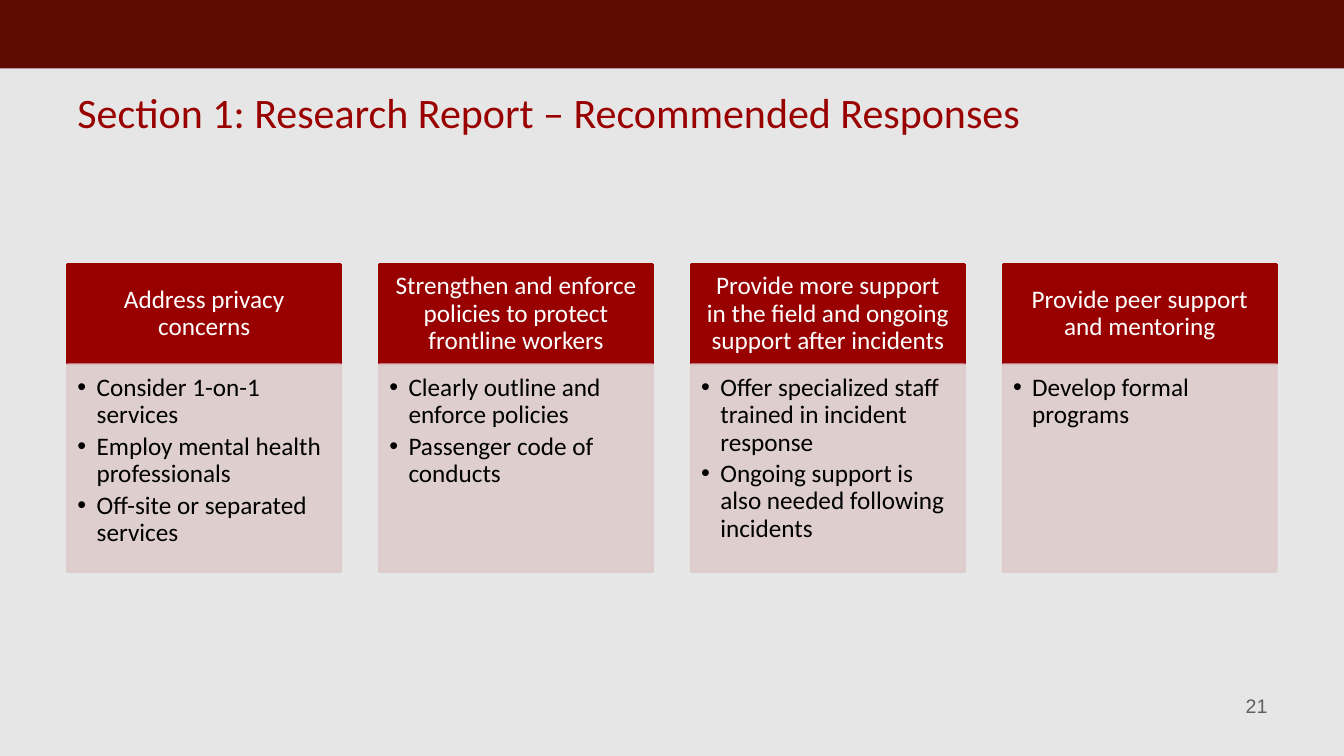
from lxml import etree
from pptx import Presentation
from pptx.dml.color import RGBColor
from pptx.enum.shapes import MSO_SHAPE
from pptx.enum.text import MSO_ANCHOR, PP_ALIGN
from pptx.oxml.ns import qn
from pptx.util import Inches, Pt

RECTANGLE = MSO_SHAPE.RECTANGLE
TOP, MIDDLE = MSO_ANCHOR.TOP, MSO_ANCHOR.MIDDLE
LEFT, CENTER, RIGHT = PP_ALIGN.LEFT, PP_ALIGN.CENTER, PP_ALIGN.RIGHT

RED, PINK = "990000", "DECCCC"
COLUMN_LEFT, COLUMN_STEP, COLUMN_WIDTH = 0.67, 3.093, 2.71
HEADER_TOP, HEADER_HEIGHT = 2.62, 0.99
BODY_TOP, BODY_HEIGHT = 3.62, 2.05
DEFAULT_INSETS = (0.1, 0.05, 0.1, 0.05)
HEADER_INSETS = (0.14, 0.08, 0.14, 0.08)
BODY_INSETS = (0.1, 0.1, 0.14, 0.16)
BULLET_INDENT = 0.19

RESPONSES = [
    ("Address privacy concerns",
     ["Consider 1-on-1 services",
      "Employ mental health professionals",
      "Off-site or separated services"]),
    ("Strengthen and enforce policies to protect frontline workers",
     ["Clearly outline and enforce policies",
      "Passenger code of conducts"]),
    ("Provide more support in the field and ongoing support after incidents",
     ["Offer specialized staff trained in incident response",
      "Ongoing support is also needed following incidents"]),
    ("Provide peer support and mentoring",
     ["Develop formal programs"]),
]


def paint(color_format, color):
    color_format.rgb = RGBColor.from_string(color)


def add_box(page, place, color, outlined=True):
    box = page.shapes.add_shape(RECTANGLE, *map(Inches, place))
    box.shadow.inherit = False
    box.fill.solid()
    paint(box.fill.fore_color, color)
    if outlined:
        box.line.width = Pt(2)
        paint(box.line.color, color)
    else:
        box.line.fill.background()
    return box


def set_opacity(box, percent):
    for color in box._element.spPr.iter(qn("a:srgbClr")):
        etree.SubElement(color, qn("a:alpha"), val=str(percent * 1000))


def add_bullet(para):
    properties = para._p.get_or_add_pPr()
    properties.set("marL", str(Inches(BULLET_INDENT)))
    properties.set("indent", str(-Inches(BULLET_INDENT)))
    etree.SubElement(properties, qn("a:buFont"), typeface="Arial")
    etree.SubElement(properties, qn("a:buChar"), char="•")


def write(box, lines, size, color, font="Calibri", align=LEFT, anchor=TOP,
          insets=DEFAULT_INSETS, spacing=1.0, after=0, bulleted=False):
    frame = box.text_frame
    frame.word_wrap = True
    frame.vertical_anchor = anchor
    (frame.margin_left, frame.margin_top,
     frame.margin_right, frame.margin_bottom) = map(Inches, insets)
    frame.text = "\n".join(lines)
    for para in frame.paragraphs:
        if bulleted:
            add_bullet(para)
        para.alignment = align
        para.line_spacing = spacing
        para.space_after = Pt(after)
        para.font.name = font
        para.font.size = Pt(size)
        paint(para.font.color, color)


def add_text(page, place, text, size, color, **style):
    box = page.shapes.add_textbox(*map(Inches, place))
    write(box, [text], size, color, **style)


def add_response(page, left, heading, actions):
    header = add_box(page, (left, HEADER_TOP, COLUMN_WIDTH, HEADER_HEIGHT), RED)
    write(header, [heading], 18, "FFFFFF", align=CENTER, anchor=MIDDLE,
          insets=HEADER_INSETS, spacing=0.9)
    body = add_box(page, (left, BODY_TOP, COLUMN_WIDTH, BODY_HEIGHT), PINK)
    set_opacity(body, 90)
    write(body, actions, 18, "000000", insets=BODY_INSETS, spacing=0.9,
          after=3, bulleted=True)


def main():
    deck = Presentation()
    deck.slide_width, deck.slide_height = Inches(13.33), Inches(7.5)
    page = deck.slides.add_slide(deck.slide_layouts[6])
    page.background.fill.solid()
    paint(page.background.fill.fore_color, "E7E6E6")

    add_box(page, (0, 0, 13.33, 0.68), "5E0C02", outlined=False)
    add_text(page, (0.67, 0.67, 12, 0.88),
             "Section 1: Research Report – Recommended Responses",
             30, RED, anchor=MIDDLE)
    for index, (heading, actions) in enumerate(RESPONSES):
        add_response(page, COLUMN_LEFT + index * COLUMN_STEP, heading, actions)
    add_text(page, (9.56, 6.83, 3.11, 0.52), "21", 14, "5F5F5F",
             font="Arial", align=RIGHT)
    deck.save("out.pptx")


if __name__ == "__main__":
    main()
